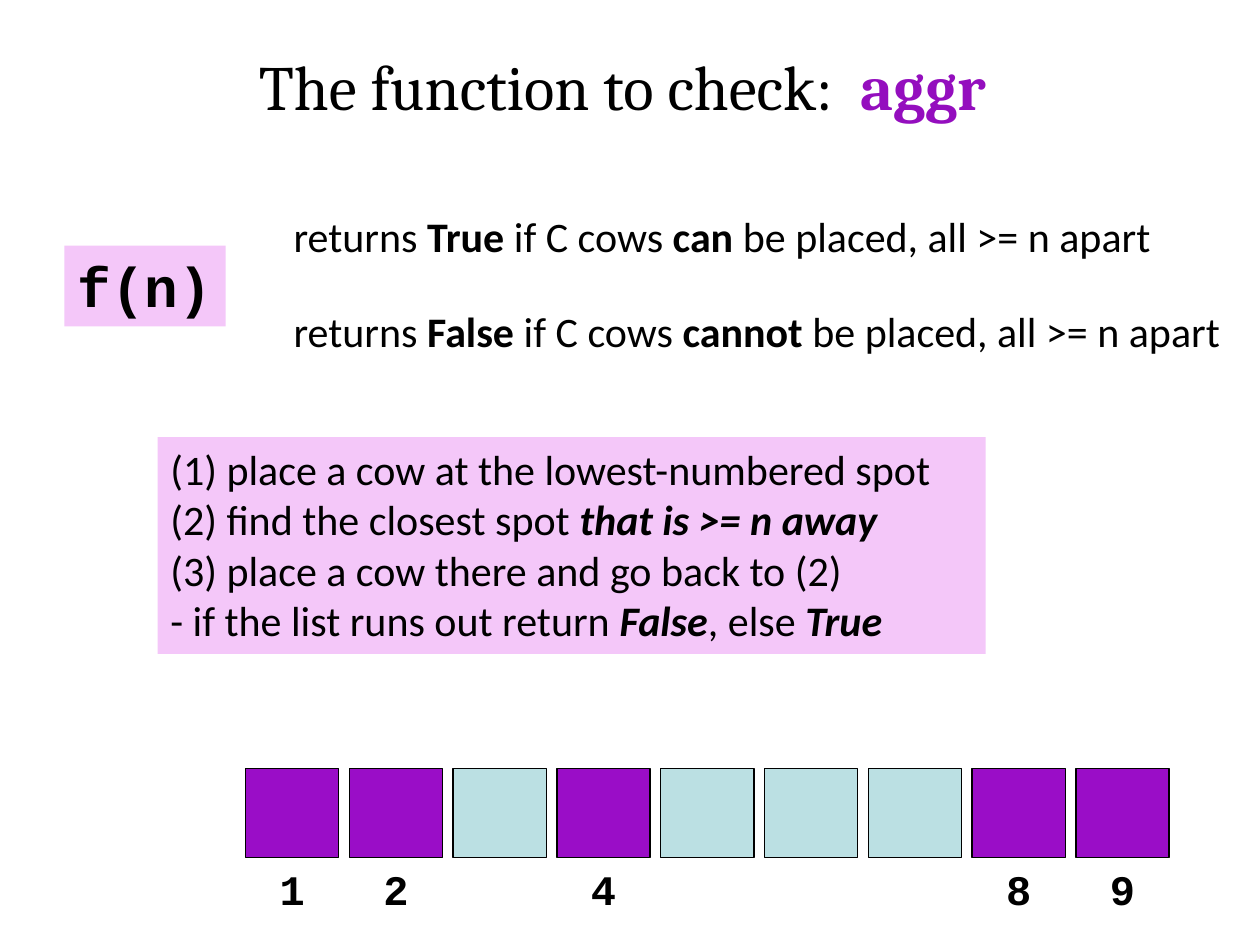
from typing import NamedTuple

from lxml import etree
from pptx import Presentation
from pptx.dml.color import RGBColor
from pptx.enum.shapes import MSO_SHAPE
from pptx.enum.text import MSO_ANCHOR, MSO_AUTO_SIZE, PP_ALIGN
from pptx.oxml.ns import qn
from pptx.util import Cm, Pt

RECTANGLE = MSO_SHAPE.RECTANGLE
TOP = MSO_ANCHOR.TOP
FIXED = MSO_AUTO_SIZE.NONE
LEFT, CENTER = PP_ALIGN.LEFT, PP_ALIGN.CENTER

BLACK = RGBColor(0x00, 0x00, 0x00)
TITLE_PURPLE = RGBColor(0x94, 0x0E, 0xBE)
COW_PURPLE = RGBColor(0x9A, 0x0D, 0xC7)
EMPTY_BLUE = RGBColor(0xBB, 0xE0, 0xE3)
PANEL_PINK = RGBColor(0xF4, 0xC7, 0xF9)

PLAIN, BOLD, BOLD_ITALIC = (False, False), (True, False), (True, True)

STEPS = [
    [("(1) place a cow at the lowest-numbered spot", PLAIN)],
    [("(2) find the closest spot ", PLAIN), ("that is >= n away", BOLD_ITALIC)],
    [("(3) place a cow there and go back to (2)", PLAIN)],
    [("- if the list runs out return ", PLAIN), ("False", BOLD_ITALIC),
     (", else ", PLAIN), ("True", BOLD_ITALIC)],
]
OUTCOMES = [("True", "can"), ("False", "cannot")]
SPOT_COUNT = 9
COW_SPOTS = {1, 2, 4, 8, 9}


class Box(NamedTuple):
    left: float
    top: float
    width: float
    height: float

    def lengths(self):
        return [Cm(value) for value in self]


def add_span(para, text, style, font_name, size, color=BLACK):
    span = para.add_run()
    span.text = text
    font = span.font
    font.name, font.size = font_name, Pt(size)
    font.bold, font.italic = style
    font.color.rgb = color


def move_placeholder(placeholder, box):
    (placeholder.left, placeholder.top,
     placeholder.width, placeholder.height) = box.lengths()
    frame = placeholder.text_frame
    frame.vertical_anchor = TOP
    frame.auto_size = FIXED
    return frame


def add_text(page, box, spans, font_name, size, align=LEFT, wrap=True):
    text_box = page.shapes.add_textbox(*box.lengths())
    frame = text_box.text_frame
    frame.word_wrap = wrap
    para = frame.paragraphs[0]
    para.alignment = align
    for text, style in spans:
        add_span(para, text, style, font_name, size)
    return text_box


def fill_with(shape, color):
    shape.fill.solid()
    shape.fill.fore_color.rgb = color


def place_title(page, box):
    para = move_placeholder(page.shapes.title, box).paragraphs[0]
    para.alignment = CENTER
    add_span(para, "The function to check:  ", PLAIN, "Cambria", 36)
    add_span(para, "aggr", BOLD, "Cambria", 36, TITLE_PURPLE)


def place_definition(page, box):
    name_box = Box(box.left, box.top + 0.84, 3.25, 1.63)
    name = add_text(page, name_box, [("f(n)", BOLD)], "Courier New", 32, CENTER, False)
    fill_with(name, PANEL_PINK)
    indent, line_height = 4.37, 1.27
    pitch = box.height - line_height
    for row, (result, ability) in enumerate(OUTCOMES):
        spans = [("returns ", PLAIN), (result, BOLD), (" if C cows ", PLAIN),
                 (ability, BOLD), (" be placed, all >= n apart", PLAIN)]
        line_box = Box(box.left + indent, box.top + row * pitch,
                       box.width - indent, line_height)
        add_text(page, line_box, spans, "Calibri", 24)


def place_steps(page, box):
    body = page.placeholders[1]
    fill_with(body, PANEL_PINK)
    frame = move_placeholder(body, box)
    for index, spans in enumerate(STEPS):
        para = frame.add_paragraph() if index else frame.paragraphs[0]
        para.alignment = LEFT
        para.space_before = Pt(0)
        properties = para._p.get_or_add_pPr()
        properties.set("marL", "0")
        properties.set("indent", "0")
        etree.SubElement(properties, qn("a:buNone"))
        for text, style in spans:
            add_span(para, text, style, "Calibri", 24)


def place_spots(page, box):
    cell_width, label_width, label_height = 1.88, 1.02, 1.27
    pitch = (box.width - cell_width) / (SPOT_COUNT - 1)
    for spot in range(1, SPOT_COUNT + 1):
        left = box.left + (spot - 1) * pitch
        cell_box = Box(left, box.top, cell_width, box.height)
        cell = page.shapes.add_shape(RECTANGLE, *cell_box.lengths())
        cell.shadow.inherit = False
        fill_with(cell, COW_PURPLE if spot in COW_SPOTS else EMPTY_BLUE)
        cell.line.color.rgb = BLACK
        cell.line.width = Pt(0.75)
        if spot in COW_SPOTS:
            label_box = Box(left + (cell_width - label_width) / 2,
                            box.top + box.height, label_width, label_height)
            add_text(page, label_box, [(str(spot), BOLD)], "Courier New", 24, CENTER, False)


def main():
    deck = Presentation()
    deck.slide_width, deck.slide_height = Cm(25.4), Cm(19.05)
    page = deck.slides.add_slide(deck.slide_layouts[1])
    place_title(page, Box(4.29, 0.84, 16.51, 1.78))
    place_definition(page, Box(1.3, 4.11, 23.87, 3.2))
    place_steps(page, Box(3.18, 8.81, 16.69, 4.37))
    place_spots(page, Box(4.95, 15.49, 18.62, 1.8))
    deck.save("out.pptx")


if __name__ == "__main__":
    main()
